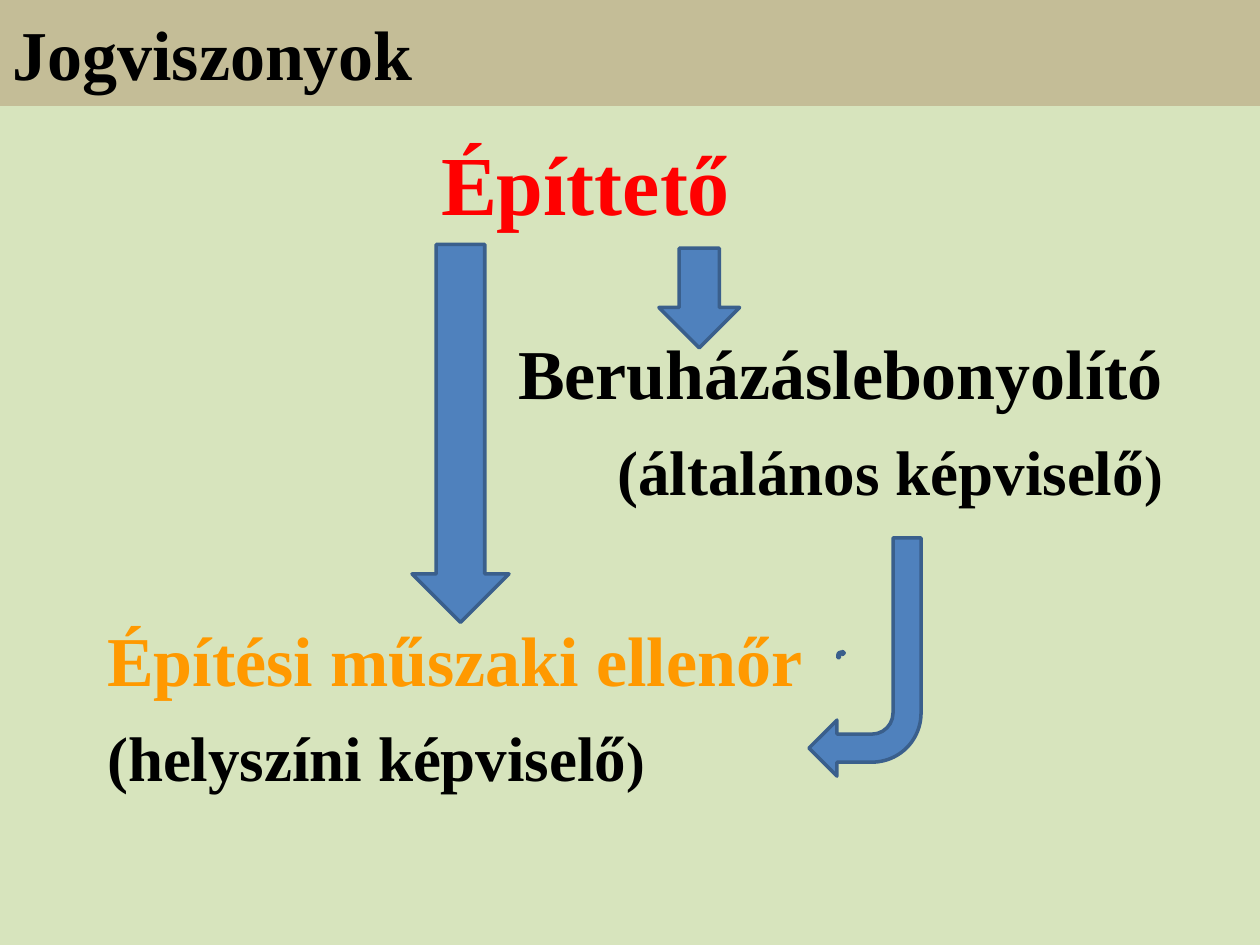
"""Builds the Jogviszonyok slide: the client, its representatives and their links."""
from lxml import etree
from pptx import Presentation
from pptx import util as u
from pptx.dml.color import RGBColor
from pptx.enum import shapes, text

FONT = "Times New Roman"
BLACK = RGBColor(0x00, 0x00, 0x00)
RED = RGBColor(0xFF, 0x00, 0x00)
ORANGE = RGBColor(0xFF, 0x99, 0x00)
GREEN = RGBColor(0xD7, 0xE4, 0xBD)
TAN = RGBColor(0xC4, 0xBD, 0x97)
BLUE = RGBColor(0x4F, 0x81, 0xBD)
DARK_BLUE = RGBColor(0x3A, 0x5F, 0x8C)

LEFT, RIGHT = text.PP_ALIGN.LEFT, text.PP_ALIGN.RIGHT
DOWN, BENT = shapes.MSO_SHAPE.DOWN_ARROW, shapes.MSO_SHAPE.BENT_ARROW

TITLE = "Jogviszonyok"
# Runs, alignment, left margin (in), space before (pt)
LINES = [
    ([("Építtető", 48, RED)], LEFT, 2.65, 5),
    ([("Beruházáslebonyolító", 40, BLACK)], RIGHT, 0, 56),
    ([("(általános képviselő", 36, BLACK), (")", 32, BLACK)], RIGHT, 0, 10.5),
    ([("Építési műszaki ellenőr", 40, ORANGE)], LEFT, 0, 62),
    ([("(helyszíni képviselő", 36, BLACK), (")", 32, BLACK)], LEFT, 0, 10.5),
]
ARROWS = [
    (DOWN, (5.23, 1.97, 0.64, 0.79), 0),
    (DOWN, (3.27, 1.94, 0.77, 3), 0),
    (BENT, (6.65, 5.17, 0.05, 0.05), 0),
    (BENT, (6.42, 4.27, 0.89, 1.89), 180),
]


def place(sp, box):
    sp.left, sp.top, sp.width, sp.height = map(u.Inches, box)


def add_run(p, words, size, color):
    r = p.add_run()
    r.text = words
    r.font.name, r.font.size, r.font.bold = FONT, u.Pt(size), True
    r.font.color.rgb = color


def add_line(p, runs, align, margin, before):
    p.alignment, p.space_before = align, u.Pt(before)
    pPr = p._p.get_or_add_pPr()
    pPr.set("marL", str(u.Inches(margin)))
    pPr.set("indent", "0")
    etree.SubElement(pPr, pPr.tag.replace("}pPr", "}buNone"))
    for run in runs:
        add_run(p, *run)


def add_arrow(s, kind, box, rotation):
    sp = s.shapes.add_shape(kind, *map(u.Inches, box))
    sp.rotation = rotation
    sp.shadow.inherit = False
    sp.fill.solid()
    sp.fill.fore_color.rgb = BLUE
    sp.line.color.rgb = DARK_BLUE
    sp.line.width = u.Pt(2)


def main():
    prs = Presentation()
    prs.slide_width, prs.slide_height = u.Inches(10), u.Inches(7.5)
    s = prs.slides.add_slide(prs.slide_layouts[1])
    s.background.fill.solid()
    s.background.fill.fore_color.rgb = GREEN

    title, body = s.placeholders
    place(title, (0, 0, 10, 0.84))
    title.fill.solid()
    title.fill.fore_color.rgb = TAN
    tf = title.text_frame
    tf.auto_size = text.MSO_AUTO_SIZE.NONE
    tf.vertical_anchor = text.MSO_ANCHOR.MIDDLE
    tf.paragraphs[0].alignment = LEFT
    add_run(tf.paragraphs[0], TITLE, 40, BLACK)

    place(body, (0.75, 0.99, 8.58, 5.84))
    tf = body.text_frame
    tf.auto_size = text.MSO_AUTO_SIZE.NONE
    for i, line in enumerate(LINES):
        add_line(tf.add_paragraph() if i else tf.paragraphs[0], *line)

    for arrow in ARROWS:
        add_arrow(s, *arrow)
    prs.save("out.pptx")


if __name__ == "__main__":
    main()
